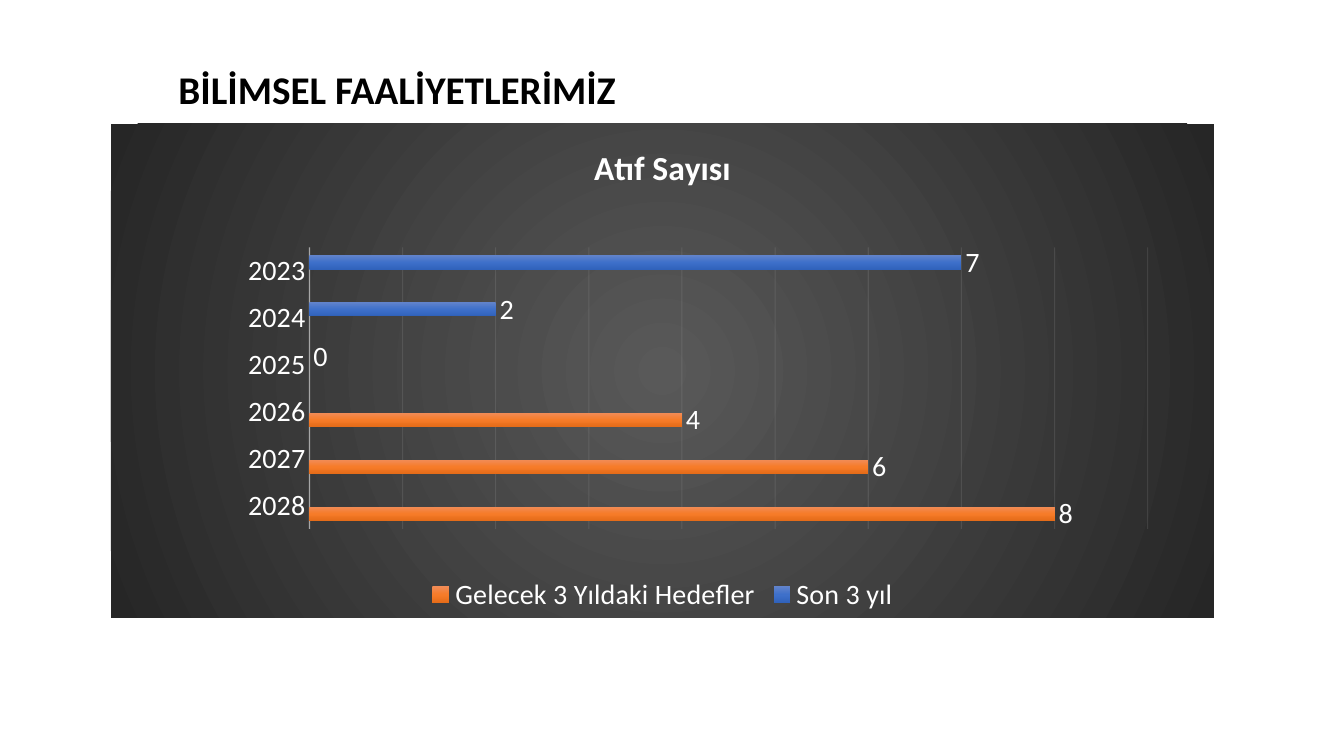
from lxml import etree
from pptx import Presentation
from pptx.chart.data import CategoryChartData
from pptx.dml.color import RGBColor
from pptx.enum.chart import (XL_CHART_TYPE, XL_LABEL_POSITION,
                             XL_LEGEND_POSITION, XL_TICK_MARK)
from pptx.enum.text import MSO_ANCHOR, PP_ALIGN
from pptx.oxml import parse_xml
from pptx.oxml.ns import nsdecls, qn
from pptx.util import Inches, Pt

BAR = XL_CHART_TYPE.BAR_CLUSTERED
OUTSIDE = XL_LABEL_POSITION.OUTSIDE_END
BOTTOM = XL_LEGEND_POSITION.BOTTOM
NO_TICK = XL_TICK_MARK.NONE
MIDDLE = MSO_ANCHOR.MIDDLE
LEFT = PP_ALIGN.LEFT

BLACK = RGBColor(0x00, 0x00, 0x00)
WHITE = RGBColor(0xFF, 0xFF, 0xFF)
PALE = RGBColor(0xF2, 0xF2, 0xF2)
GREY, DARK = RGBColor(0x59, 0x59, 0x59), RGBColor(0x26, 0x26, 0x26)
BLUES = (RGBColor(0x61, 0x83, 0xCB), RGBColor(0x3E, 0x70, 0xCA), RGBColor(0x30, 0x62, 0xBB))
ORANGES = (RGBColor(0xF1, 0x8C, 0x57), RGBColor(0xF6, 0x7B, 0x28), RGBColor(0xE5, 0x6C, 0x19))

HEADING = "BİLİMSEL FAALİYETLERİMİZ"
HEADING_BOX = (1.67, 0.4, 8.08, 1.02)
CHART_TITLE = "Atıf Sayısı"
CHART_BOX = (1.1, 1.23, 10.94, 4.9)
PLOT_AREA = {"x": 0.18, "y": 0.25, "w": 0.76, "h": 0.57}
YEARS = ("2023", "2024", "2025", "2026", "2027", "2028")
CITATIONS = (
    ("Son 3 yıl", (7, 2, 0, None, None, None), BLUES),
    ("Gelecek 3 Yıldaki Hedefler", (None, None, None, 4, 6, 8), ORANGES),
)

HEADING_FONT = {"name": "Calibri", "size": Pt(28), "bold": True}
CHART_FONT = {"name": "Calibri", "size": Pt(20), "bold": False}
CHART_TITLE_FONT = {"name": "Calibri", "size": Pt(24), "bold": True}
LINEAR = '<a:lin ang="5400000" scaled="0"/>'
CIRCLE = ('<a:path path="circle"><a:fillToRect l="50000" t="50000" '
          'r="50000" b="50000"/></a:path>')


def style(font, values, color):
    for key, value in values.items():
        setattr(font, key, value)
    font.color.rgb = color


def gradient(colors, direction):
    step = 100000 // (len(colors) - 1)
    stops = "".join(f'<a:gs pos="{i * step}"><a:srgbClr val="{color}"/></a:gs>'
                    for i, color in enumerate(colors))
    return parse_xml(f'<a:gradFill {nsdecls("a")} rotWithShape="1">'
                     f'<a:gsLst>{stops}</a:gsLst>{direction}</a:gradFill>')


def faint_line(line, width, opacity):
    line.width = Pt(width)
    line.color.rgb = PALE
    for color in line._ln.iter(qn("a:srgbClr")):
        etree.SubElement(color, qn("a:alpha")).set("val", str(opacity * 1000))


def place_plot(plot_area):
    for old in plot_area.findall(qn("c:layout")):
        plot_area.remove(old)
    values = {"layoutTarget": "inner", "xMode": "edge", "yMode": "edge", **PLOT_AREA}
    layout = etree.Element(qn("c:layout"))
    manual = etree.SubElement(layout, qn("c:manualLayout"))
    for key, value in values.items():
        etree.SubElement(manual, qn(f"c:{key}")).set("val", str(value))
    plot_area.insert(0, layout)


def add_heading(slide):
    heading = slide.shapes.title
    heading.left, heading.top, heading.width, heading.height = map(Inches, HEADING_BOX)
    heading.text_frame.text = HEADING
    heading.text_frame.vertical_anchor = MIDDLE
    line = heading.text_frame.paragraphs[0]
    line.alignment = LEFT
    line.line_spacing = 0.9
    style(line.runs[0].font, HEADING_FONT, BLACK)


def add_citations(slide):
    data = CategoryChartData()
    data.categories = YEARS
    for name, values, _ in CITATIONS:
        data.add_series(name, values)
    chart = slide.shapes.add_chart(BAR, *map(Inches, CHART_BOX), data).chart
    style(chart.font, CHART_FONT, WHITE)

    chart.has_title = True
    chart.chart_title.include_in_layout = False
    title = chart.chart_title.text_frame
    title.text = CHART_TITLE
    style(title.paragraphs[0].runs[0].font, CHART_TITLE_FONT, WHITE)

    chart.has_legend = True
    chart.legend.position = BOTTOM
    chart.legend.include_in_layout = False
    style(chart.legend.font, CHART_FONT, WHITE)

    years = chart.category_axis
    years.reverse_order = True
    years.major_tick_mark = years.minor_tick_mark = NO_TICK
    style(years.tick_labels.font, CHART_FONT, WHITE)
    faint_line(years.format.line, 1, 54)

    counts = chart.value_axis
    counts.minimum_scale, counts.maximum_scale, counts.major_unit = 0, 9, 1
    counts.has_major_gridlines = True
    faint_line(counts.major_gridlines.format.line, 0.75, 10)
    counts.visible = False

    bars = chart.plots[0]
    bars.gap_width, bars.overlap = 115, -20
    bars.vary_by_categories = False
    for series, (_, _, colors) in zip(bars.series, CITATIONS):
        series.invert_if_negative = False
        series._element.get_or_add_spPr().append(gradient(colors, LINEAR))
        labels = series.data_labels
        labels.show_value = True
        labels.position = OUTSIDE
        style(labels.font, CHART_FONT, WHITE)

    body = chart._chartSpace.find(qn("c:chart"))
    place_plot(body.find(qn("c:plotArea")))
    backdrop = etree.Element(qn("c:spPr"))
    backdrop.append(gradient((GREY, DARK), CIRCLE))
    edge = etree.SubElement(backdrop, qn("a:ln"))
    etree.SubElement(edge, qn("a:noFill"))
    body.addnext(backdrop)


def main():
    deck = Presentation()
    deck.slide_width, deck.slide_height = Inches(13.33), Inches(7.5)
    slide = deck.slides.add_slide(deck.slide_layouts[5])
    add_heading(slide)
    add_citations(slide)
    deck.save("out.pptx")


if __name__ == "__main__":
    main()
